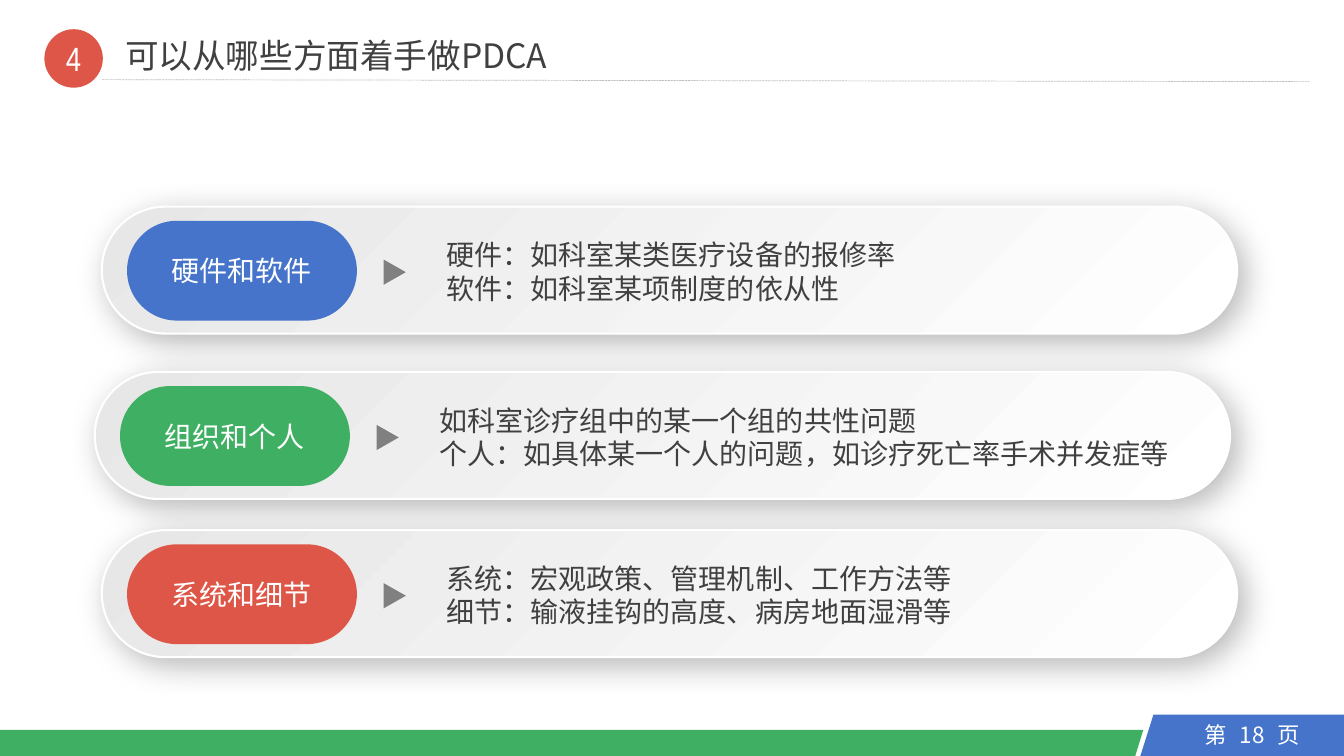
from dataclasses import dataclass

from lxml.etree import SubElement
from pptx import Presentation
from pptx.dml.color import RGBColor
from pptx.enum.dml import MSO_LINE
from pptx.enum.shapes import MSO_CONNECTOR, MSO_SHAPE
from pptx.enum.text import MSO_ANCHOR, PP_ALIGN
from pptx.oxml.ns import qn
from pptx.util import Inches, Pt


@dataclass(frozen=True)
class Theme:
    blue: str = "4674CA"
    green: str = "3FAF63"
    red: str = "DE5647"
    white: str = "FFFFFF"
    ink: str = "404040"
    arrow: str = "808080"
    rule: str = "BFBFBF"
    card_start: str = "E7E7E7"
    shadow: str = "000000"
    font: str = "Noto Sans CJK SC"
    number_font: str = "Arial Narrow"
    title_size: int = 24
    body_size: int = 20
    page_size: int = 16


T = Theme()
COLS, ROWS = 13.33, 7.5  # grid of one-inch squares
CARD_W, CARD_H = 11.26, 1.26
CARDS = [
    (1.01, 2.05, T.blue, "硬件和软件",
     ["硬件：如科室某类医疗设备的报修率", "软件：如科室某项制度的依从性"]),
    (0.94, 3.69, T.green, "组织和个人",
     ["如科室诊疗组中的某一个组的共性问题",
      "个人：如具体某一个人的问题，如诊疗死亡率手术并发症等"]),
    (1.01, 5.26, T.red, "系统和细节",
     ["系统：宏观政策、管理机制、工作方法等", "细节：输液挂钩的高度、病房地面湿滑等"]),
]


def grid(*squares):
    return [Inches(n) for n in squares]


def rgb(color):
    return RGBColor.from_string(color)


def write(shape, lines, size, color, font=T.font, align=PP_ALIGN.LEFT,
          anchor=MSO_ANCHOR.TOP, wrap=False):
    tf = shape.text_frame
    tf.text = "\n".join(lines)
    tf.word_wrap = wrap
    tf.vertical_anchor = anchor
    for p in tf.paragraphs:
        p.alignment = align
        p.font.name, p.font.size = font, Pt(size)
        p.font.color.rgb = rgb(color)
        props = p._p.pPr.find(qn("a:defRPr"))
        SubElement(props, qn("a:ea"), typeface=font)


def add_block(shapes, kind, box, color):
    sp = shapes.add_shape(kind, *grid(*box))
    sp.shadow.inherit = False
    sp.fill.solid()
    sp.fill.fore_color.rgb = rgb(color)
    sp.line.fill.background()
    return sp


def add_band(s, points, color):
    corners = [grid(*point) for point in points]
    builder = s.shapes.build_freeform(*corners[0], scale=1)
    builder.add_line_segments(corners[1:], close=True)
    sp = builder.convert_to_shape()
    sp.shadow.inherit = False
    sp.fill.solid()
    sp.fill.fore_color.rgb = rgb(color)
    sp.line.fill.background()


def add_soft_shadow(sp):
    sp.shadow.inherit = False
    effects = sp._element.spPr.find(qn("a:effectLst"))
    shadow = SubElement(effects, qn("a:outerShdw"), blurRad=str(Pt(22)),
                        dist=str(Pt(6)), dir=str(45 * 60000), algn="tl",
                        rotWithShape="0")
    color = SubElement(shadow, qn("a:srgbClr"), val=T.shadow)
    SubElement(color, qn("a:alpha"), val="28000")


def add_card(s, left, top, color, label, lines):
    shapes = s.shapes.add_group_shape().shapes
    base = add_block(shapes, MSO_SHAPE.ROUNDED_RECTANGLE,
                     (left, top, CARD_W, CARD_H), T.white)
    base.adjustments[0] = 0.5
    base.fill.gradient()
    base.fill.gradient_angle = 315
    for stop, shade in zip(base.fill.gradient_stops, (T.card_start, T.white)):
        stop.color.rgb = rgb(shade)
    base.fill.gradient_stops[0].position = 0
    base.fill.gradient_stops[1].position = 1
    base.line.color.rgb = rgb(T.white)
    base.line.width = Pt(1.5)
    add_soft_shadow(base)

    pill = add_block(shapes, MSO_SHAPE.ROUNDED_RECTANGLE,
                     (left + 0.25, top + 0.14, 2.28, 0.99), color)
    pill.adjustments[0] = 0.5
    write(pill, [label], T.body_size, T.white, align=PP_ALIGN.CENTER,
          anchor=MSO_ANCHOR.MIDDLE)

    detail = shapes.add_textbox(*grid(left + 3.32, top + 0.26, 7.93, 0.77))
    write(detail, lines, T.body_size, T.ink, wrap=True)

    arrow = add_block(shapes, MSO_SHAPE.ISOSCELES_TRIANGLE,
                      (left + 2.78, top + 0.54, 0.25, 0.22), T.arrow)
    arrow.rotation = 90


def add_header(s, number, title):
    badge = add_block(s.shapes, MSO_SHAPE.OVAL, (0.44, 0.29, 0.58, 0.58), T.red)
    write(badge, [number], T.title_size, T.white, T.number_font,
          PP_ALIGN.CENTER, MSO_ANCHOR.MIDDLE)

    sp = s.shapes.title
    sp.left, sp.top, sp.width, sp.height = grid(1.14, 0.3, 4.49, 0.5)
    write(sp, [title], T.title_size, T.ink)

    rule = s.shapes.add_connector(MSO_CONNECTOR.STRAIGHT,
                                  *grid(1.01, 0.79, 12.99, 0.81))
    rule.line.color.rgb = rgb(T.rule)
    rule.line.width = Pt(0.5)
    rule.line.dash_style = MSO_LINE.SQUARE_DOT
    SubElement(rule._element.spPr, qn("a:effectLst"))


def add_footer(s, page):
    add_band(s, [(0, 7.24), (11.34, 7.24), (11.26, ROWS), (0, ROWS)], T.green)
    add_band(s, [(11.44, 7.09), (COLS, 7.09), (COLS, ROWS), (11.31, ROWS)], T.blue)
    for i, word in enumerate(["第", page, "页"]):
        box = s.shapes.add_textbox(*grid(11.81 + 0.36 * i, 7.11, 0.5, 0.37))
        write(box, [word], T.page_size, T.white, align=PP_ALIGN.CENTER)


def main():
    prs = Presentation()
    prs.slide_width, prs.slide_height = grid(COLS, ROWS)
    s = prs.slides.add_slide(prs.slide_layouts[5])
    add_footer(s, "18")
    for card in CARDS:
        add_card(s, *card)
    add_header(s, "4", "可以从哪些方面着手做PDCA")
    prs.save("out.pptx")


if __name__ == "__main__":
    main()
